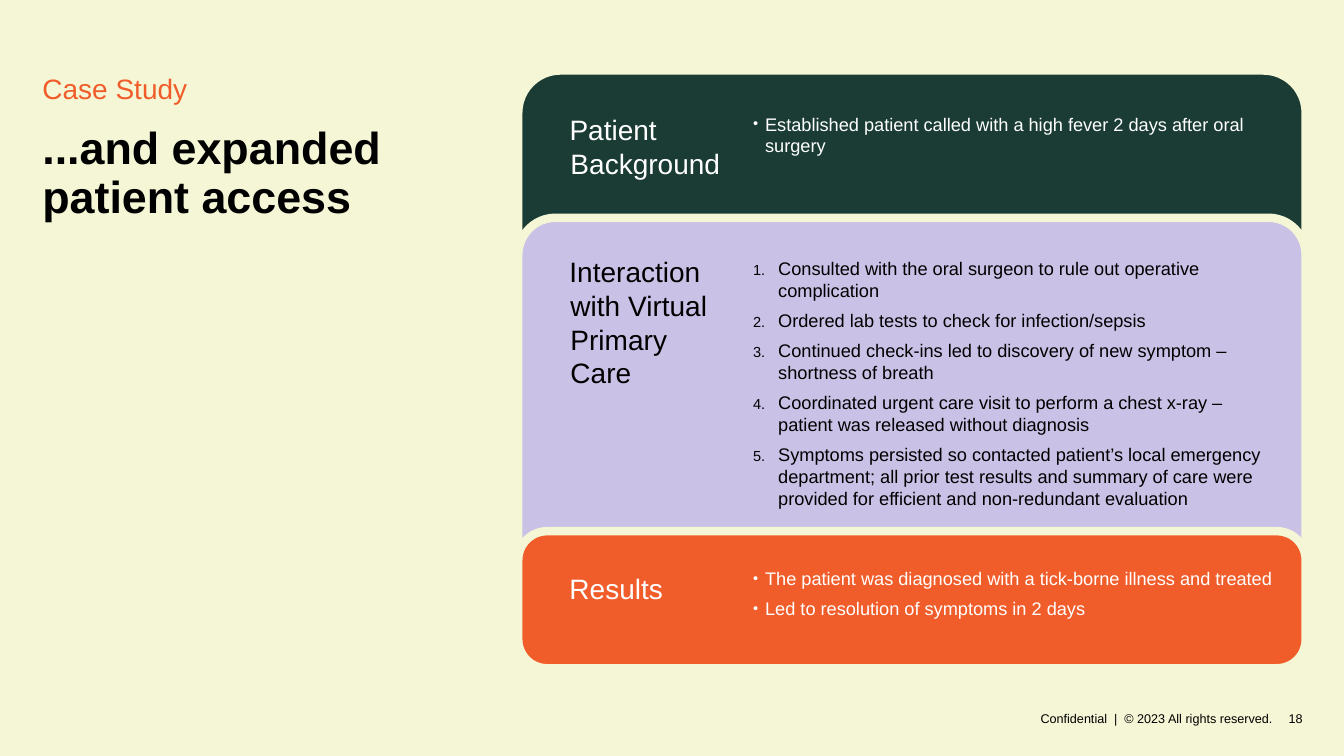
import pptx
import pptx.util
import pptx.dml.color
import pptx.enum.shapes
import pptx.enum.text
import pptx.oxml.ns
from lxml import etree

Inches, Pt = pptx.util.Inches, pptx.util.Pt
ALIGN, ANCHOR = pptx.enum.text.PP_ALIGN, pptx.enum.text.MSO_ANCHOR

COLORS = {"cream": "F5F6D6", "green": "1A3C34", "lilac": "CAC1E6",
          "orange": "F15D2A", "black": "000000", "white": "FFFFFF"}
FONT = "Arial"

TITLE = "...and expanded patient access"
KICKER = "Case Study"
FOOTER = "Confidential  |  © 2023 All rights reserved."
PAGE = "18"

# Card: top, height, corner; heading: top, width, height; body: top, height
SECTIONS = [
    {"heading": "Patient Background", "fill": "green", "ink": "white",
     "card": (0.7, 2.67, 0.157), "head": (1.07, 2.09, 0.77), "body": (1.07, 0.54),
     "numbered": False,
     "items": ["Established patient called with a high fever 2 days after oral surgery"]},
    {"heading": "Interaction with Virtual Primary Care", "fill": "lilac", "ink": "black",
     "card": (2.16, 3.69, 0.1), "head": (2.48, 1.77, 1.45), "body": (2.5, 2.63),
     "numbered": True,
     "items": [
         "Consulted with the oral surgeon to rule out operative complication",
         "Ordered lab tests to check for infection/sepsis",
         "Continued check-ins led to discovery of new symptom – shortness of breath",
         "Coordinated urgent care visit to perform a chest x-ray – "
         "patient was released without diagnosis",
         "Symptoms persisted so contacted patient’s local emergency department; "
         "all prior test results and summary of care were provided for efficient "
         "and non-redundant evaluation"]},
    {"heading": "Results", "fill": "orange", "ink": "white",
     "card": (5.27, 1.36, 0.21), "head": (5.62, 1.77, 0.44), "body": (5.58, 0.62),
     "numbered": False,
     "items": ["The patient was diagnosed with a tick-borne illness and treated",
               "Led to resolution of symptoms in 2 days"]},
]
CARD_X, CARD_W = 5.14, 7.81
HEAD_X = 5.55
BODY_X, BODY_W = 7.37, 5.39


def rgb(name):
    return pptx.dml.color.RGBColor.from_string(COLORS[name])


def add_marker(p, numbered):
    """Give a paragraph a small bullet or number."""
    pPr = p._p.get_or_add_pPr()
    tags = [("buSzPct", {"val": "80000"}), ("buFont", {"typeface": FONT})]
    if numbered:
        tags.append(("buAutoNum", {"type": "arabicPeriod"}))
    else:
        tags.append(("buChar", {"char": "•"}))
    for tag, attrs in tags:
        etree.SubElement(pPr, pptx.oxml.ns.qn("a:" + tag), attrs)


def write(sp, texts, size, color, bold=False, align=ALIGN.LEFT, anchor=ANCHOR.TOP,
          inset=True, hang=0, marker=None, before=0, after=0, spacing=None):
    """Fill a shape with one paragraph per text; marker is bullet, number or None."""
    tf = sp.text_frame
    tf.word_wrap = True
    tf.auto_size = pptx.enum.text.MSO_AUTO_SIZE.NONE
    tf.vertical_anchor = anchor
    if not inset:
        tf.margin_left = tf.margin_right = tf.margin_top = tf.margin_bottom = 0
    for i, text in enumerate(texts):
        p = tf.add_paragraph() if i else tf.paragraphs[0]
        if marker:
            add_marker(p, marker == "number")
        if hang:
            pPr = p._p.get_or_add_pPr()
            pPr.set("marL", str(Inches(hang)))
            pPr.set("indent", str(-Inches(hang)))
        p.alignment = align
        p.space_before = Pt(before if i else 0)
        p.space_after = Pt(after)
        if spacing:
            p.line_spacing = spacing
        r = p.add_run()
        r.text = text
        r.font.name, r.font.size, r.font.bold = FONT, Pt(size), bold
        r.font.color.rgb = rgb(color)


def add_text(s, box, texts, size, color, **style):
    sp = s.shapes.add_textbox(*map(Inches, box))
    write(sp, texts, size, color, **style)


def add_card(s, top, height, corner, fill):
    sp = s.shapes.add_shape(pptx.enum.shapes.MSO_SHAPE.ROUNDED_RECTANGLE,
                            Inches(CARD_X), Inches(top), Inches(CARD_W), Inches(height))
    sp.adjustments[0] = corner
    sp.shadow.inherit = False
    sp.fill.solid()
    sp.fill.fore_color.rgb = rgb(fill)
    sp.line.color.rgb = rgb("cream")
    sp.line.width = Pt(6)


def main():
    prs = pptx.Presentation()
    prs.slide_width, prs.slide_height = Inches(13.33), Inches(7.5)
    s = prs.slides.add_slide(prs.slide_layouts[5])
    s.background.fill.solid()
    s.background.fill.fore_color.rgb = rgb("cream")

    title = s.shapes.title
    title.left, title.top, title.width, title.height = map(Inches, (0.42, 1.25, 4.4, 0.97))
    write(title, [TITLE], 32, "black", bold=True, inset=False, spacing=0.9)
    add_text(s, (0.42, 0.7, 4.4, 0.34), [KICKER], 20, "orange",
             anchor=ANCHOR.BOTTOM, inset=False)

    for section in SECTIONS:
        add_card(s, *section["card"], section["fill"])
    for section in SECTIONS:
        top, width, height = section["head"]
        add_text(s, (HEAD_X, top, width, height), [section["heading"]], 20,
                 section["ink"], hang=0.01, after=3)
        top, height = section["body"]
        if section["numbered"]:
            style = {"marker": "number", "hang": 0.25, "before": 3, "after": 3}
        else:
            style = {"marker": "bullet", "hang": 0.12, "after": 6}
        add_text(s, (BODY_X, top, BODY_W, height), section["items"], 13,
                 section["ink"], **style)

    for text, left, width in [(FOOTER, 10.22, 2.4), (PAGE, 12.62, 0.3)]:
        add_text(s, (left, 7.05, width, 0.15), [text], 9, "black",
                 align=ALIGN.RIGHT, anchor=ANCHOR.MIDDLE, inset=False)
    prs.save("out.pptx")


if __name__ == "__main__":
    main()
